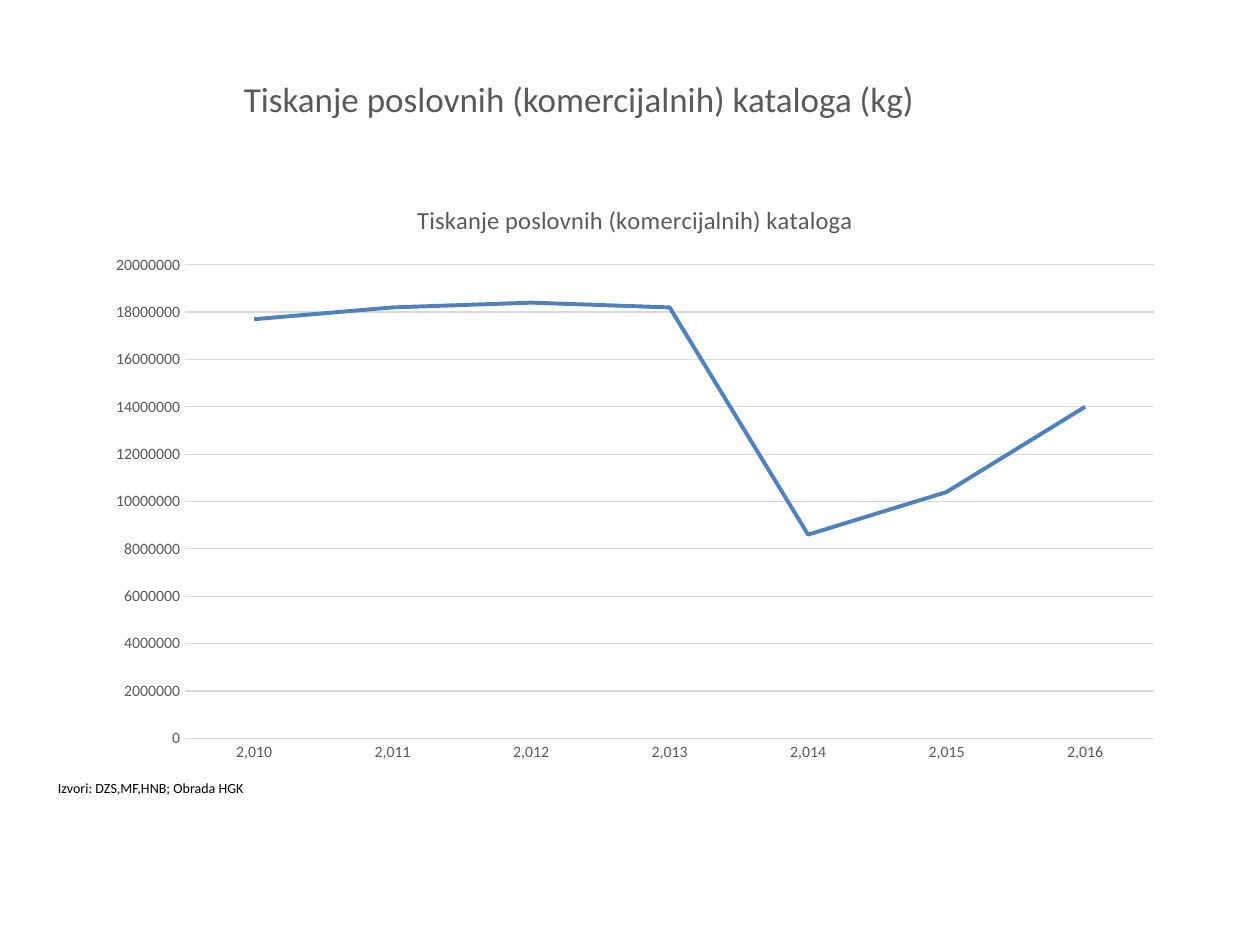
from pptx import Presentation
from pptx.chart.data import CategoryChartData
from pptx.dml.color import RGBColor
from pptx.enum.chart import XL_CHART_TYPE, XL_TICK_MARK
from pptx.enum.text import MSO_ANCHOR, PP_ALIGN
from pptx.util import Pt

LINE_CHART = XL_CHART_TYPE.LINE
NO_TICKS = XL_TICK_MARK.NONE
MIDDLE = MSO_ANCHOR.MIDDLE
CENTER = PP_ALIGN.CENTER

FONT = "Calibri"
GRAY, LIGHT_GRAY, BLUE, BLACK = "595959", "D9D9D9", "4F81BD", "000000"
SERIES_NAME = "Tiskanje poslovnih (komercijalnih) kataloga"
YEARS = range(2010, 2017)
KILOGRAMS = (17700000, 18200000, 18400000, 18200000, 8600000, 10400000, 14000000)


def color(hex_string):
    return RGBColor.from_string(hex_string)


def set_attributes(target, values):
    for name, value in values.items():
        setattr(target, name, value)


def format_font(font, size, hex_string):
    set_attributes(font, {"name": FONT, "size": Pt(size), "bold": False})
    font.color.rgb = color(hex_string)


def format_line(line, width, hex_string):
    line.width = Pt(width)
    line.color.rgb = color(hex_string)


def add_title(slide, box, text):
    title = slide.shapes.title
    set_attributes(title, dict(zip(("left", "top", "width", "height"), map(Pt, box))))
    frame = title.text_frame
    set_attributes(frame, {"text": text, "word_wrap": False, "vertical_anchor": MIDDLE})
    paragraph = frame.paragraphs[0]
    paragraph.alignment = CENTER
    format_font(paragraph.runs[0].font, 20, GRAY)


def add_source_note(slide, box, text):
    frame = slide.shapes.add_textbox(*map(Pt, box)).text_frame
    set_attributes(frame, {"text": text, "word_wrap": True})
    format_font(frame.paragraphs[0].runs[0].font, 8, BLACK)


def add_line_chart(slide, box):
    data = CategoryChartData(number_format="0")
    data.categories = YEARS
    data.categories.number_format = "#,##0"
    data.add_series(SERIES_NAME, KILOGRAMS)
    chart = slide.shapes.add_chart(LINE_CHART, *map(Pt, box), data).chart
    format_font(chart.font, 10, BLACK)
    chart.has_legend = False

    # Chart title
    chart.has_title = True
    title_frame = chart.chart_title.text_frame
    title_frame.text = SERIES_NAME
    format_font(title_frame.paragraphs[0].runs[0].font, 14, GRAY)
    chart.chart_title.include_in_layout = False

    # Axes
    for axis, number_format in ((chart.category_axis, "#,##0"), (chart.value_axis, "0")):
        set_attributes(axis, {"major_tick_mark": NO_TICKS, "minor_tick_mark": NO_TICKS})
        labels = axis.tick_labels
        set_attributes(labels, {"number_format": number_format,
                                "number_format_is_linked": False})
        format_font(labels.font, 9, GRAY)
    format_line(chart.category_axis.format.line, 0.75, LIGHT_GRAY)
    value_axis = chart.value_axis
    set_attributes(value_axis, {"minimum_scale": 0, "maximum_scale": 20000000,
                                "major_unit": 2000000})
    value_axis.format.line.fill.background()
    format_line(value_axis.major_gridlines.format.line, 0.75, LIGHT_GRAY)

    # Series
    plot = chart.plots[0]
    plot.vary_by_categories = False
    series = plot.series[0]
    series.smooth = False
    format_line(series.format.line, 2.25, BLUE)


def main():
    presentation = Presentation()
    set_attributes(presentation, {"slide_width": Pt(720), "slide_height": Pt(540)})
    slide = presentation.slides.add_slide(presentation.slide_layouts[5])
    add_title(slide, (130.3, 40.3, 401, 31.7), f"{SERIES_NAME} (kg)")
    add_source_note(slide, (26, 442, 441, 17), "Izvori: DZS,MF,HNB; Obrada HGK")
    add_line_chart(slide, (54, 103, 618, 339))
    presentation.save("out.pptx")


if __name__ == "__main__":
    main()
